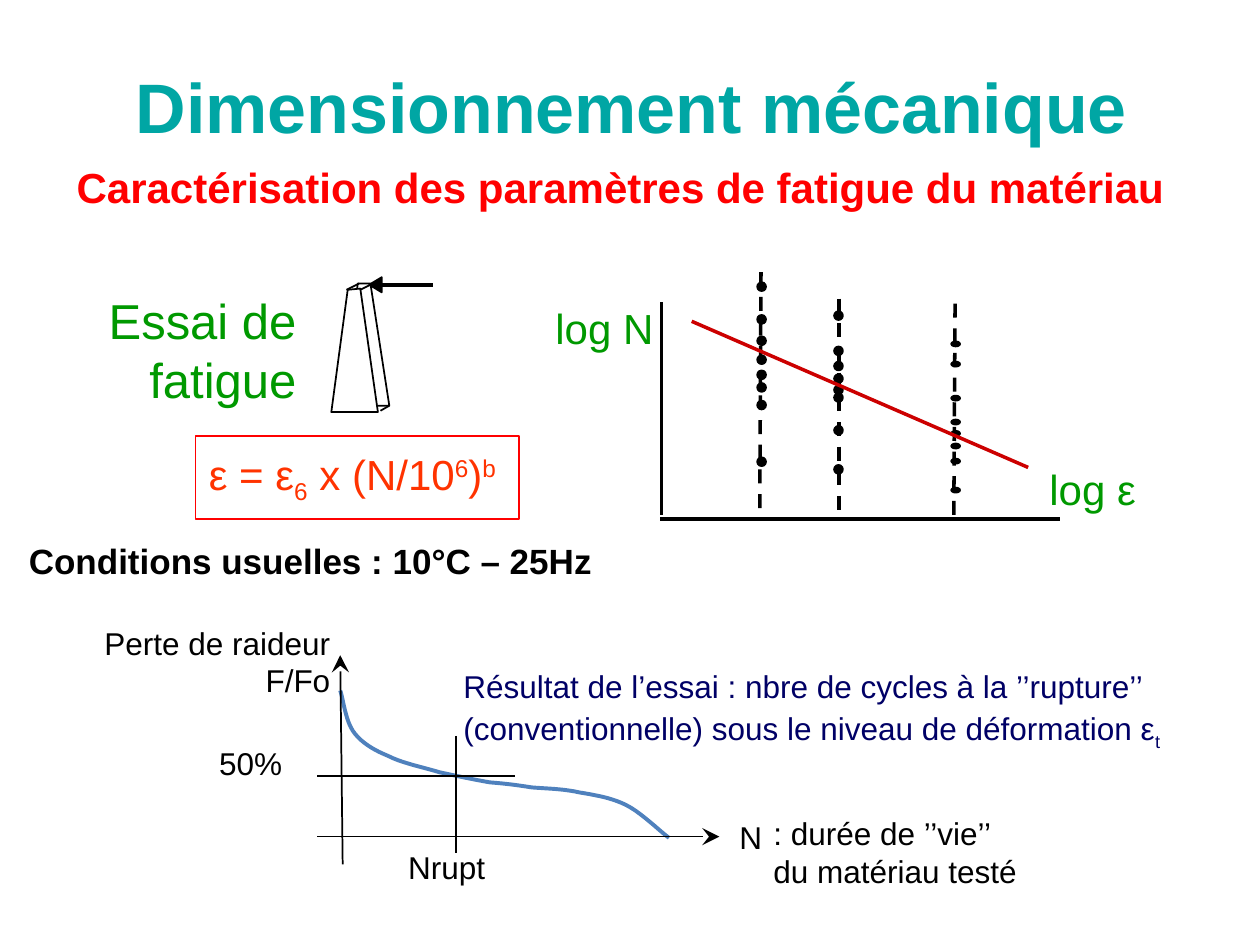
from lxml import etree
from pptx import Presentation
from pptx.dml.color import RGBColor
from pptx.enum.dml import MSO_LINE
from pptx.enum.shapes import MSO_CONNECTOR, MSO_SHAPE
from pptx.enum.text import MSO_ANCHOR, PP_ALIGN
from pptx.oxml.ns import qn
from pptx.util import Inches, Pt

TEAL = RGBColor(0x00, 0xA6, 0xA4)
RED = RGBColor(0xFF, 0x00, 0x00)
DARK_RED = RGBColor(0xCC, 0x00, 0x00)
ORANGE = RGBColor(0xFF, 0x33, 0x00)
GREEN = RGBColor(0x00, 0x99, 0x00)
NAVY = RGBColor(0x00, 0x00, 0x66)
BLUE = RGBColor(0x4F, 0x81, 0xBD)
BLACK = RGBColor(0x00, 0x00, 0x00)
WHITE = RGBColor(0xFF, 0xFF, 0xFF)


class SlideBuilder:
    font_name = "Arial"

    def __init__(self, slide):
        self.slide = slide

    def style_font(self, paragraph, size, color, bold):
        font = paragraph.font
        font.name, font.size, font.bold = self.font_name, Pt(size), bold
        font.color.rgb = color

    def title(self, text, box):
        shape = self.slide.shapes.title
        shape.left, shape.top, shape.width, shape.height = map(Inches, box)
        frame = shape.text_frame
        frame.text = text
        frame.vertical_anchor = MSO_ANCHOR.MIDDLE
        paragraph = frame.paragraphs[0]
        paragraph.alignment = PP_ALIGN.CENTER
        self.style_font(paragraph, 40, TEAL, True)

    def text(self, lines, box, size=18, color=BLACK, bold=False,
             align=PP_ALIGN.LEFT, wrap=True, spacing=None):
        """Each line is a paragraph: a string, or a list of (text, baseline) runs."""
        shape = self.slide.shapes.add_textbox(*map(Inches, box))
        frame = shape.text_frame
        frame.word_wrap = wrap
        for index, line in enumerate(lines):
            paragraph = frame.paragraphs[0] if index == 0 else frame.add_paragraph()
            if isinstance(line, str):
                paragraph.text = line
            else:
                for part, baseline in line:
                    run = paragraph.add_run()
                    run.text = part
                    if baseline:
                        run.font._element.set("baseline", str(baseline * 1000))
            paragraph.alignment = align
            if spacing:
                paragraph.line_spacing = Pt(spacing)
            self.style_font(paragraph, size, color, bold)

    def line(self, start, end, width=1, color=BLACK, dashed=False, arrow=False):
        """Draw a straight line, with the optional arrowhead at its end."""
        connector = self.slide.shapes.add_connector(
            MSO_CONNECTOR.STRAIGHT, *map(Inches, (*start, *end)))
        connector.line.width = Pt(width)
        connector.line.color.rgb = color
        if dashed:
            connector.line.dash_style = MSO_LINE.DASH
        if arrow:
            etree.SubElement(connector.line._get_or_add_ln(), qn("a:tailEnd"),
                             type="stealth", w="lg", len="lg")
        etree.SubElement(connector._element.spPr, qn("a:effectLst"))

    def finish(self, shape, fill, color, width):
        shape.shadow.inherit = False
        if fill is None:
            shape.fill.background()
        else:
            shape.fill.solid()
            shape.fill.fore_color.rgb = fill
        shape.line.color.rgb = color
        shape.line.width = Pt(width)

    def shape(self, kind, box, fill=None, color=BLACK, width=1):
        self.finish(self.slide.shapes.add_shape(kind, *map(Inches, box)), fill, color, width)

    def outline(self, points, fill=None, color=BLACK, width=1, close=True):
        first, *rest = [(Inches(x), Inches(y)) for x, y in points]
        builder = self.slide.shapes.build_freeform(*first)
        builder.add_line_segments(rest, close=close)
        self.finish(builder.convert_to_shape(), fill, color, width)


def bezier_points(knots, steps=10):
    """Sample a chain of cubic curves given as start, control, control, end, ..."""
    points = [knots[0]]
    for first in range(0, len(knots) - 1, 3):
        a, b, c, d = knots[first:first + 4]
        for step in range(1, steps + 1):
            t = step / steps
            u = 1 - t
            points.append(tuple(
                u**3 * p + 3 * u * u * t * q + 3 * u * t * t * r + t**3 * s
                for p, q, r, s in zip(a, b, c, d)))
    return points


def draw_specimen(builder):
    builder.outline([(2.84, 2.25), (2.71, 3.22), (3.09, 3.22), (2.94, 2.25)])
    builder.outline([(2.76, 2.3), (2.63, 3.27), (3, 3.27), (2.86, 2.29)], fill=WHITE)
    for start, end in [((2.75, 2.3), (2.85, 2.25)), ((2.86, 2.3), (2.96, 2.25)),
                       ((3.02, 3.26), (3.09, 3.22))]:
        builder.line(start, end)
    builder.line((3.01, 2.26), (3.44, 2.26), 2)
    builder.outline([(3.03, 2.32), (3.03, 2.2), (2.93, 2.26)], fill=BLACK)
    builder.text(["Essai de fatigue"], (0.53, 2.26, 1.92, 1.03), 28, GREEN,
                 align=PP_ALIGN.RIGHT)


def draw_fatigue_plot(builder):
    builder.line((5.25, 2.4), (5.25, 4.09), 2)
    builder.line((5.24, 4.12), (8.41, 4.12), 2)
    builder.text(["log ε"], (8.23, 3.63, 1.22, 0.5), 24, GREEN)
    builder.text(["log N"], (4.31, 2.35, 1.27, 0.5), 24, GREEN)
    # Strain level: dashed line ends, dot left, dot height, dot tops
    levels = [
        ((6.04, 2.16), (6.03, 4.06), 6.01, 0.07,
         [2.24, 2.5, 2.67, 2.82, 2.94, 3.04, 3.18, 3.63]),
        ((6.66, 2.37), (6.66, 4.06), 6.62, 0.07,
         [2.47, 2.75, 2.87, 2.97, 3.06, 3.12, 3.38, 3.69]),
        ((7.58, 2.41), (7.57, 4.12), 7.55, 0.04,
         [2.71, 2.87, 3.14, 3.33, 3.42, 3.52, 3.64, 3.87]),
    ]
    for start, end, left, height, tops in levels:
        builder.line(start, end, 2, dashed=True)
        for top in tops:
            builder.shape(MSO_SHAPE.OVAL, (left, top, 0.07, height), fill=BLACK)
    builder.line((5.49, 2.55), (8.16, 3.71), 2, DARK_RED)


def draw_stiffness_plot(builder):
    builder.text(
        [[("Résultat de l’essai : nbre de cycles à la ’’rupture’’ "
           "(conventionnelle) sous le niveau de déformation ε", 0), ("t", -25)]],
        (3.58, 5.17, 6.37, 0.83), color=NAVY, spacing=27)
    curve = [(2.7, 5.48), (2.72, 5.53), (2.74, 5.71), (2.8, 5.8),
             (2.86, 5.89), (2.96, 5.95), (3.08, 6), (3.2, 6.06), (3.36, 6.09),
             (3.49, 6.13), (3.63, 6.16), (3.77, 6.19), (3.89, 6.21),
             (4.01, 6.22), (4.1, 6.23), (4.22, 6.25), (4.34, 6.26), (4.47, 6.26),
             (4.6, 6.29), (4.72, 6.31), (4.85, 6.33), (4.97, 6.39),
             (5.09, 6.45), (5.24, 6.6), (5.31, 6.65)]
    builder.outline(bezier_points(curve), color=BLUE, width=2.25, close=False)
    builder.line((2.72, 6.86), (2.7, 5.2), arrow=True)
    builder.line((2.52, 6.64), (5.71, 6.64), arrow=True)
    builder.line((2.52, 6.16), (4.09, 6.16))
    builder.line((3.62, 5.84), (3.62, 6.77))
    for lines, box in [
        (["N"], (5.77, 6.44, 0.4, 0.43)),
        (["50%"], (1.64, 5.86, 0.76, 0.43)),
        (["Nrupt"], (3.14, 6.68, 0.89, 0.44)),
        ([": durée de ’’vie’’", "du matériau testé"], (6.04, 6.41, 2.34, 0.77)),
    ]:
        builder.text(lines, box, wrap=False)
    builder.text(["Perte de raideur\vF/Fo"], (0.53, 4.9, 2.19, 0.77),
                 align=PP_ALIGN.RIGHT, wrap=False)


def main():
    presentation = Presentation()
    presentation.slide_width, presentation.slide_height = Inches(10), Inches(7.5)
    builder = SlideBuilder(presentation.slides.add_slide(presentation.slide_layouts[5]))
    builder.title("Dimensionnement mécanique", (0.51, 0.21, 9, 1.25))
    builder.text(["Caractérisation des paramètres de fatigue du matériau"],
                 (0.51, 1.23, 9, 0.5), 24, RED, bold=True)
    draw_specimen(builder)
    draw_fatigue_plot(builder)
    builder.text([[("ε = ε", 0), ("6", -25), (" x (N/10", 0), ("6", 30), (")", 0), ("b", 30)]],
                 (1.56, 3.51, 3.13, 0.5), 24, ORANGE)
    builder.shape(MSO_SHAPE.RECTANGLE, (1.55, 3.46, 2.57, 0.66), color=RED, width=0.75)
    draw_stiffness_plot(builder)
    builder.text(["Conditions usuelles : 10°C – 25Hz"], (0.13, 4.23, 4.75, 0.44), 20, bold=True)
    presentation.save("out.pptx")


if __name__ == "__main__":
    main()
